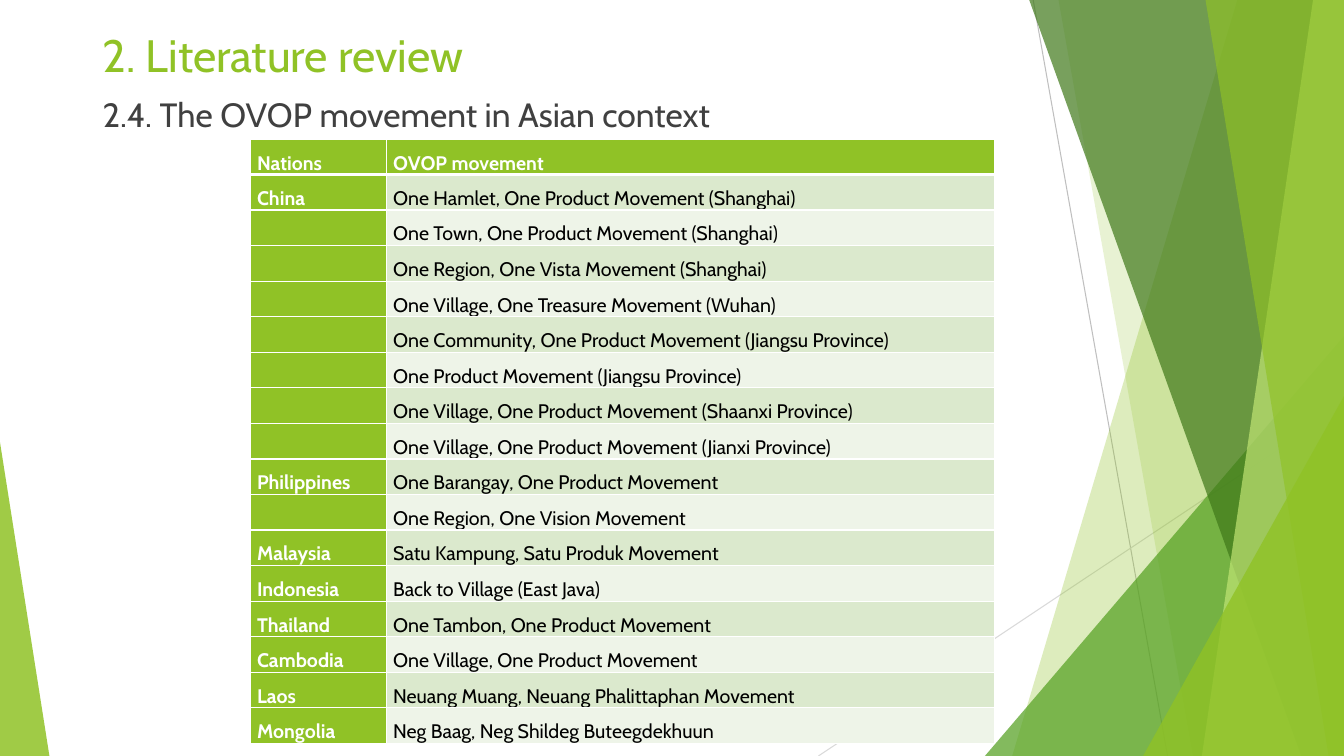
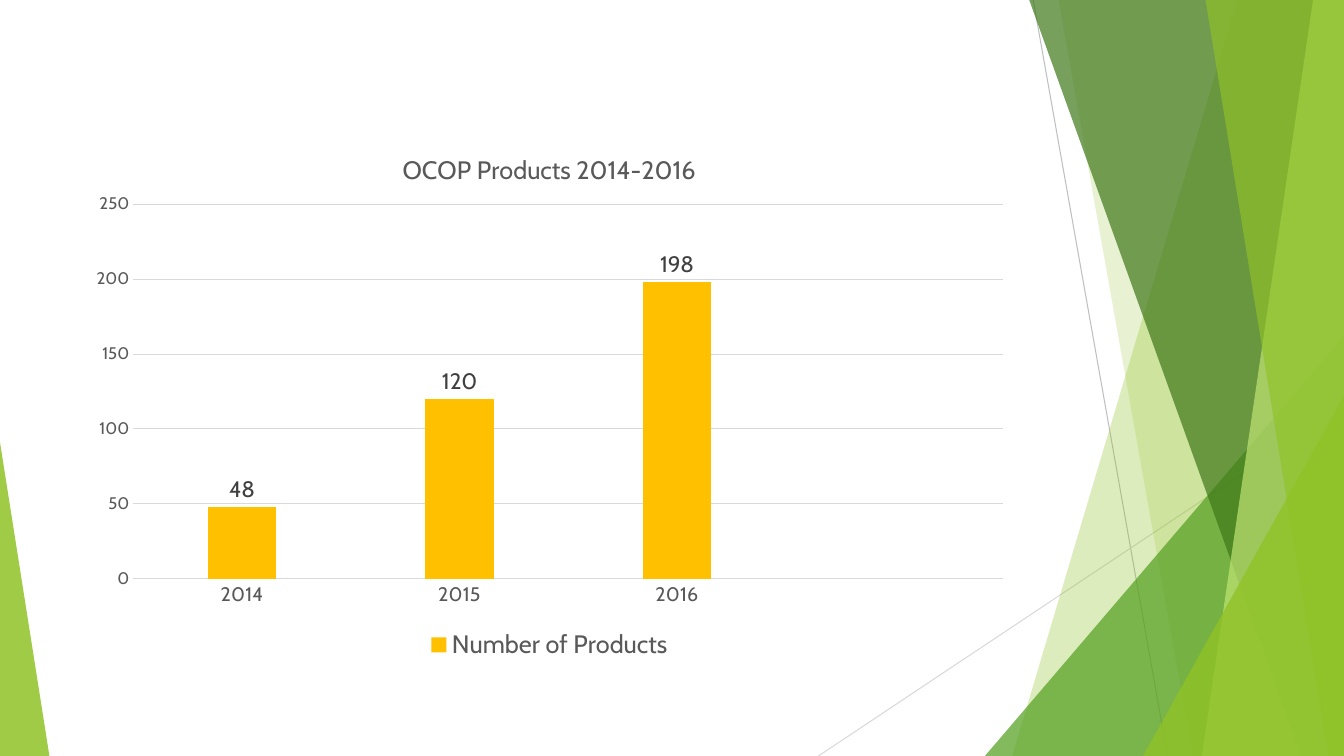
from dataclasses import dataclass

from lxml import etree
from pptx import Presentation
from pptx import util as u
from pptx.chart import data as chart_data
from pptx.dml.color import RGBColor
from pptx.enum import chart as ch
from pptx.enum import shapes, text
from pptx.oxml.ns import qn

Pt = u.Pt


@dataclass(frozen=True)
class Theme:
    font: str = "Cabin"
    white: str = "FFFFFF"
    black: str = "000000"
    lime: str = "90C226"
    pale_lime: str = "C0E474"
    leaf: str = "54A021"
    forest: str = "3F7819"
    gold: str = "FFC000"
    ink: str = "404040"
    grey: str = "595959"
    rule: str = "BFBFBF"
    light_rule: str = "D9D9D9"
    row_dark: str = "DBE9CD"
    row_light: str = "EEF4E8"
    title_size: float = 32.4
    subtitle_size: float = 24
    chart_title_size: float = 18
    label_size: float = 16
    table_size: float = 14
    axis_size: float = 12
    line: float = 0.75


THEME = Theme()
WIDTH, HEIGHT = 960, 540
BLEED = -0.6

# top left x, bottom left x, colour, opacity in percent
BANDS_BACK = [(884, 723, THEME.lime, 30), (756, 852, THEME.lime, 20)]
BANDS_FRONT = [
    (735, 929.5, THEME.forest, 70),
    (938, 858.5, THEME.pale_lime, 70),
    (861, 949, THEME.lime, 65),
]

MOVEMENTS = {
    "China": [
        "One Hamlet, One Product Movement (Shanghai)",
        "One Town, One Product Movement (Shanghai)",
        "One Region, One Vista Movement (Shanghai)",
        "One Village, One Treasure Movement (Wuhan)",
        "One Community, One Product Movement (Jiangsu Province)",
        "One Product Movement (Jiangsu Province)",
        "One Village, One Product Movement (Shaanxi Province)",
        "One Village, One Product Movement (Jianxi Province)",
    ],
    "Philippines": [
        "One Barangay, One Product Movement",
        "One Region, One Vision Movement",
    ],
    "Malaysia": ["Satu Kampung, Satu Produk Movement"],
    "Indonesia": ["Back to Village (East Java)"],
    "Thailand": ["One Tambon, One Product Movement"],
    "Cambodia": ["One Village, One Product Movement"],
    "Laos": ["Neuang Muang, Neuang Phalittaphan Movement"],
    "Mongolia": ["Neg Baag, Neg Shildeg Buteegdekhuun"],
}


def rgb(colour):
    return RGBColor.from_string(colour)


def set_values(target, values):
    for name, value in values.items():
        setattr(target, name, value)


def style_font(font, size, colour, bold=False):
    set_values(font, {"name": THEME.font, "size": Pt(size), "bold": bold})
    font.color.rgb = rgb(colour)


def style_line(line, colour):
    line.width = Pt(THEME.line)
    line.color.rgb = rgb(colour)


def paint(shape, colour, opacity):
    """Give a shape a translucent fill without outline or shadow."""
    shape.shadow.inherit = False
    shape.line.fill.background()
    shape.fill.solid()
    shape.fill.fore_color.rgb = rgb(colour)
    fill_colour = shape.element.spPr.find(f"{qn('a:solidFill')}/{qn('a:srgbClr')}")
    etree.SubElement(fill_colour, qn("a:alpha"), val=str(opacity * 1000))


def add_rule(page, start, end, colour):
    rule = page.shapes.add_connector(
        shapes.MSO_CONNECTOR.STRAIGHT, *(Pt(v) for v in (*start, *end)))
    style_line(rule.line, colour)
    etree.SubElement(rule.element.spPr, qn("a:effectLst"))


def add_band(page, top_x, bottom_x, colour, opacity):
    """Fill from a slanted left edge to the right edge of the slide."""
    corners = [(WIDTH, BLEED), (WIDTH, HEIGHT), (bottom_x, HEIGHT)]
    outline = page.shapes.build_freeform(Pt(top_x), Pt(BLEED))
    outline.add_line_segments([(Pt(x), Pt(y)) for x, y in corners], close=True)
    paint(outline.convert_to_shape(), colour, opacity)


def add_corner(page, left, top, width, peak, colour, opacity):
    """Stand a right-angled triangle on the slide's bottom edge."""
    corner = page.shapes.add_shape(
        shapes.MSO_SHAPE.ISOSCELES_TRIANGLE,
        Pt(left), Pt(top), Pt(width), Pt(HEIGHT - top))
    corner.adjustments[0] = peak
    paint(corner, colour, opacity)


def add_page(deck):
    """Add a blank slide with the shared facets."""
    page = deck.slides.add_slide(deck.slide_layouts[6])
    add_rule(page, (738, 0), (834, HEIGHT), THEME.rule)
    add_rule(page, (WIDTH, 290), (584.6, HEIGHT), THEME.light_rule)
    for band in BANDS_BACK:
        add_band(page, *band)
    add_corner(page, 703.5, 240, 256.5, 1, THEME.leaf, 72)
    for band in BANDS_FRONT:
        add_band(page, *band)
    add_corner(page, 816.5, 283, 143.5, 1, THEME.lime, 80)
    add_corner(page, 0, 316, 35.3, 0, THEME.lime, 85)
    return page


def add_text(page, place, words, size, colour, anchor):
    box = page.shapes.add_textbox(*(Pt(v) for v in place))
    set_values(box.text_frame, {"word_wrap": True, "vertical_anchor": anchor})
    span = box.text_frame.paragraphs[0].add_run()
    span.text = words
    style_font(span.font, size, colour)


def add_borders(cell, widths):
    """Draw white cell borders; widths maps a side's tag to points."""
    properties = cell._tc.get_or_add_tcPr()
    for index, (side, width) in enumerate(widths.items()):
        border = etree.Element(qn(f"a:{side}"), w=str(Pt(width)))
        fill = etree.SubElement(border, qn("a:solidFill"))
        etree.SubElement(fill, qn("a:srgbClr"), val=THEME.white)
        properties.insert(index, border)


def fill_cell(cell, words, fill, colour, bold, borders):
    set_values(cell, {
        "margin_left": Pt(5), "margin_right": Pt(5),
        "margin_top": 0, "margin_bottom": 0,
        "vertical_anchor": text.MSO_ANCHOR.BOTTOM,
    })
    cell.fill.solid()
    cell.fill.fore_color.rgb = rgb(fill)
    add_borders(cell, borders)
    if words:
        para = cell.text_frame.paragraphs[0]
        para.line_spacing = 1.5
        span = para.add_run()
        span.text = words
        style_font(span.font, THEME.table_size, colour, bold)


def add_movement_table(page):
    rows = [("Nations", "OVOP movement")]
    for nation, movements in MOVEMENTS.items():
        rows += [("" if i else nation, name) for i, name in enumerate(movements)]
    widths, header_height, row_height = (97.2, 434.8), 23, 25.4
    table = page.shapes.add_table(
        len(rows), len(widths), Pt(178.6), Pt(99.4), Pt(sum(widths)),
        Pt(header_height + row_height * (len(rows) - 1))).table
    set_values(table, {"first_row": False, "horz_banding": False})
    for column, width in zip(table.columns, widths):
        column.width = Pt(width)
    for r, row in enumerate(rows):
        table.rows[r].height = Pt(row_height if r else header_height)
        borders = {"lnL": 1, "lnR": 1, "lnT": 3 if r == 1 else 1,
                   "lnB": 1 if r else 3}
        for c, words in enumerate(row):
            heading = r == 0 or c == 0
            stripe = THEME.row_dark if r % 2 else THEME.row_light
            fill_cell(table.cell(r, c), words,
                      THEME.lime if heading else stripe,
                      THEME.white if heading else THEME.black,
                      heading, borders)


def set_layout(element, values, inner=False):
    """Fix a chart part's place, as fractions of the chart's size."""
    for old in element.findall(qn("c:layout")):
        element.remove(old)
    layout = etree.Element(qn("c:layout"))
    manual = etree.SubElement(layout, qn("c:manualLayout"))
    settings = {"layoutTarget": "inner"} if inner else {}
    settings |= {"xMode": "edge", "yMode": "edge"} | values
    for name, value in settings.items():
        etree.SubElement(manual, qn(f"c:{name}"), val=str(value))
    element.insert(0 if element.find(qn("c:tx")) is None else 1, layout)


def style_axes(chart):
    for axis, size in ((chart.category_axis, THEME.table_size),
                       (chart.value_axis, THEME.axis_size)):
        set_values(axis, {"major_tick_mark": ch.XL_TICK_MARK.NONE,
                          "minor_tick_mark": ch.XL_TICK_MARK.NONE})
        style_font(axis.tick_labels.font, size, THEME.grey)
    style_line(chart.category_axis.format.line, THEME.light_rule)
    value_axis = chart.value_axis
    set_values(value_axis, {"minimum_scale": 0, "maximum_scale": 250,
                            "major_unit": 50, "has_major_gridlines": True})
    value_axis.format.line.fill.background()
    style_line(value_axis.major_gridlines.format.line, THEME.light_rule)


def add_product_chart(page):
    data = chart_data.CategoryChartData()
    data.categories = ["2014", "2015", "2016", ""]
    data.add_series("Number of Products", (48, 120, 198, None))
    chart = page.shapes.add_chart(
        ch.XL_CHART_TYPE.COLUMN_CLUSTERED,
        Pt(54.7), Pt(90), Pt(675.4), Pt(385.2), data).chart
    style_font(chart.font, 10, THEME.black)

    set_values(chart, {"has_title": True, "has_legend": True})
    span = chart.chart_title.text_frame.paragraphs[0].add_run()
    span.text = "OCOP Products 2014-2016"
    style_font(span.font, THEME.chart_title_size, THEME.grey)
    set_layout(chart.chart_title.element, {"x": 0.34, "y": 0.04})
    set_values(chart.legend, {"position": ch.XL_LEGEND_POSITION.BOTTOM,
                              "include_in_layout": False})
    style_font(chart.legend.font, THEME.chart_title_size, THEME.grey)

    style_axes(chart)
    plot = chart.plots[0]
    set_values(plot, {"gap_width": 219, "overlap": -27,
                      "vary_by_categories": False, "has_data_labels": True})
    set_values(plot.data_labels, {
        "show_value": True, "position": ch.XL_LABEL_POSITION.OUTSIDE_END})
    style_font(plot.data_labels.font, THEME.label_size, THEME.ink)
    columns = plot.series[0].format.fill
    columns.solid()
    columns.fore_color.rgb = rgb(THEME.gold)
    plot_area = chart.element.find(f".//{qn('c:plotArea')}")
    set_layout(plot_area, {"x": 0.06, "y": 0.145, "w": 0.92, "h": 0.695}, inner=True)


def main():
    deck = Presentation()
    set_values(deck, {"slide_width": Pt(WIDTH), "slide_height": Pt(HEIGHT)})

    page = add_page(deck)
    add_text(page, (66.2, 13.7, 773.3, 49.7), "2. Literature review",
             THEME.title_size, THEME.lime, text.MSO_ANCHOR.MIDDLE)
    add_text(page, (66.2, 63.4, 828, 394.6),
             "2.4. The OVOP movement in Asian context",
             THEME.subtitle_size, THEME.ink, text.MSO_ANCHOR.TOP)
    add_movement_table(page)

    add_product_chart(add_page(deck))
    deck.save("out.pptx")


if __name__ == "__main__":
    main()
